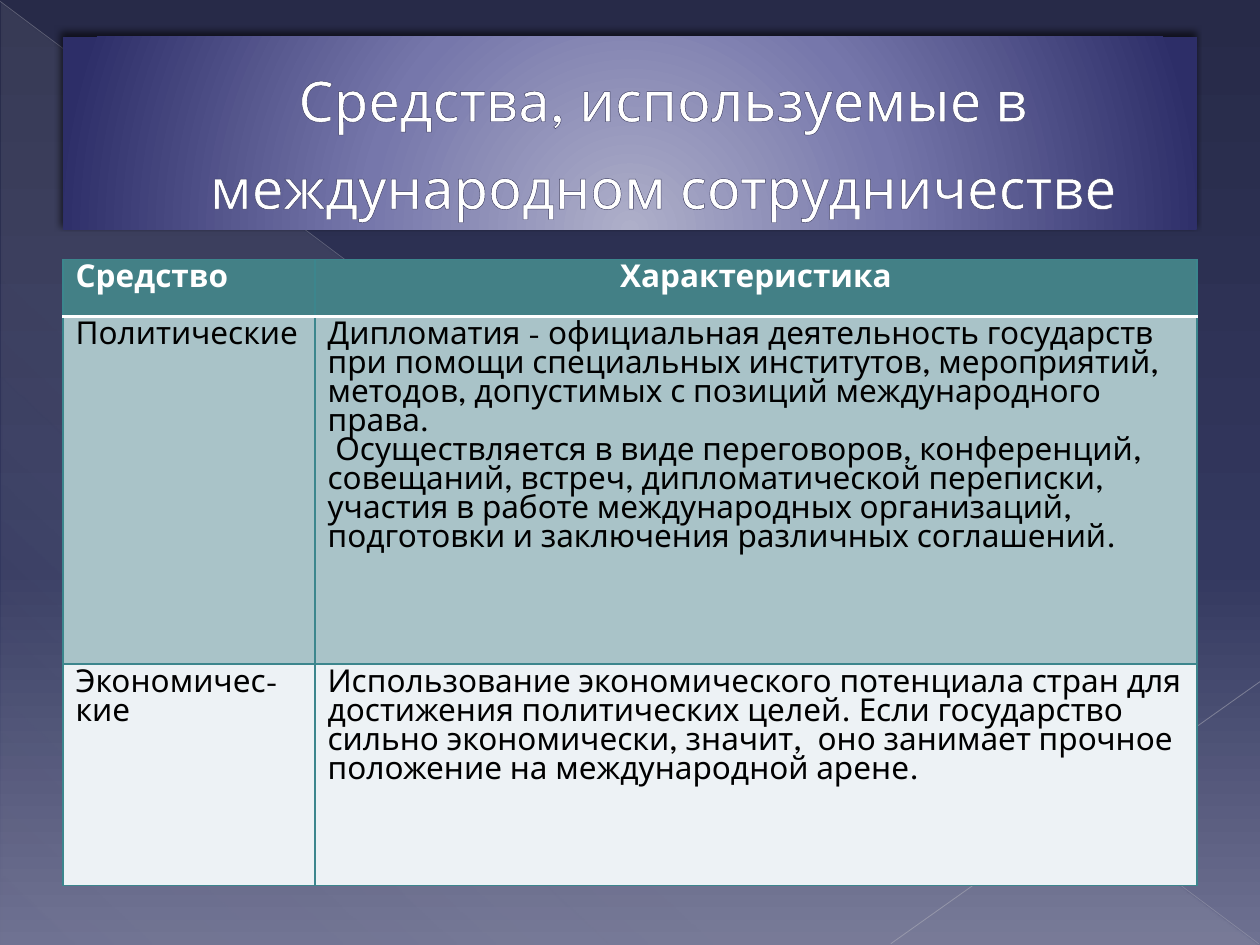
from lxml import etree
from pptx import Presentation
from pptx.dml.color import RGBColor
from pptx.enum.shapes import MSO_CONNECTOR, MSO_SHAPE
from pptx.enum.text import MSO_ANCHOR, MSO_AUTO_SIZE, PP_ALIGN
from pptx.oxml.ns import qn
from pptx.util import Inches, Pt

STRAIGHT = MSO_CONNECTOR.STRAIGHT
TRIANGLE = MSO_SHAPE.RIGHT_TRIANGLE
LEFT, CENTER = PP_ALIGN.LEFT, PP_ALIGN.CENTER
MIDDLE = MSO_ANCHOR.MIDDLE
NO_AUTOFIT = MSO_AUTO_SIZE.NONE

FONT = "League Spartan"
WHITE = RGBColor(0xFF, 0xFF, 0xFF)
BLACK = RGBColor(0x00, 0x00, 0x00)
NIGHT = RGBColor(0x27, 0x2A, 0x48)
INDIGO = RGBColor(0x33, 0x38, 0x5F)
HAZE = RGBColor(0x6E, 0x71, 0x91)
MIST = RGBColor(0xDE, 0xDE, 0xDE)
RAY = RGBColor(0xBB, 0xBB, 0xC2)
GLOW = RGBColor(0xAE, 0xAF, 0xC9)
VIOLET = RGBColor(0x76, 0x77, 0xAB)
DEEP = RGBColor(0x2D, 0x2E, 0x68)
OUTLINE = RGBColor(0x3A, 0x3A, 0x60)
TEAL = RGBColor(0x43, 0x80, 0x86)
TEAL_BORDER = RGBColor(0x3C, 0x86, 0x8D)
TEAL_BAND = RGBColor(0xA9, 0xC3, 0xC8)
PALE_BAND = RGBColor(0xED, 0xF2, 0xF5)

COLUMNS = [2, 7]
ROWS = [0.45, 2.76, 1.76]
HEADER = ["Средство", "Характеристика"]
POLITICAL = [
    "Политические",
    "Дипломатия - официальная деятельность государств при помощи специальных "
    "институтов, мероприятий, методов, допустимых с позиций международного права.\n"
    " Осуществляется в виде переговоров, конференций, совещаний, встреч, "
    "дипломатической переписки, участия в работе международных организаций, "
    "подготовки и заключения различных соглашений.",
]
ECONOMIC = [
    "Экономичес-кие",
    "Использование экономического потенциала стран для достижения политических "
    "целей. Если государство сильно экономически, значит,  оно занимает прочное "
    "положение на международной арене.",
]


def add_color(parent, color, alpha=100):
    node = etree.SubElement(parent, qn("a:srgbClr"), val=str(color))
    if alpha < 100:
        etree.SubElement(node, qn("a:alpha"), val=str(alpha * 1000))


def set_gradient(fill, owner, stops, angle=None, focus=None):
    """Stops are (position, colour, alpha); focus is a circle's l, t, r, b."""
    fill.gradient()
    gradient = next(owner.iter(qn("a:gradFill")))
    for child in list(gradient):
        gradient.remove(child)
    stop_list = etree.SubElement(gradient, qn("a:gsLst"))
    for position, color, alpha in stops:
        stop = etree.SubElement(stop_list, qn("a:gs"), pos=str(position * 1000))
        add_color(stop, color, alpha)
    if focus:
        circle = etree.SubElement(gradient, qn("a:path"), path="circle")
        sides = {side: str(value * 1000) for side, value in zip("ltrb", focus)}
        etree.SubElement(circle, qn("a:fillToRect"), **sides)
    else:
        etree.SubElement(gradient, qn("a:lin"), ang=str(angle * 60000), scaled="0")


def write_text(frame, text, size=18, color=BLACK, bold=False, align=LEFT):
    frame.word_wrap = True
    frame.text = text
    for para in frame.paragraphs:
        para.alignment = align
        for span in para.runs:
            font = span.font
            font.name, font.size, font.bold = FONT, Pt(size), bold
            font.color.rgb = color


def add_ray(page, start, end, width, alpha):
    ray = page.shapes.add_connector(STRAIGHT, *map(Inches, start + end))
    ray.line.width = Pt(width)
    ray.line.color.rgb = RAY
    color = next(ray._element.spPr.iter(qn("a:srgbClr")))
    etree.SubElement(color, qn("a:alpha"), val=str(alpha * 1000))
    etree.SubElement(ray._element.spPr, qn("a:effectLst"))


def add_backdrop(page):
    set_gradient(page.background.fill, page._element,
                 [(0, NIGHT, 100), (60, INDIGO, 100), (100, HAZE, 100)], angle=90)
    veil = page.shapes.add_shape(TRIANGLE, Inches(0.01), Inches(0.02),
                                 Inches(9.98), Inches(7.48))
    veil.shadow.inherit = False
    veil.line.fill.background()
    set_gradient(veil.fill, veil._element,
                 [(0, MIST, 10), (70, MIST, 8), (100, MIST, 1)], angle=133)
    add_ray(page, (0, 0.01), (9.99, 7.49), 0.39, 35)
    add_ray(page, (10, 5.41), (7.07, 7.49), 0.47, 45)


def add_title(page, text):
    title = page.shapes.title
    page.shapes._spTree.append(title._element)  # in front of the backdrop
    title.left, title.top = Inches(0.5), Inches(0.29)
    title.width, title.height = Inches(9), Inches(1.53)
    set_gradient(title.fill, title._element,
                 [(0, GLOW, 100), (46, VIOLET, 100), (100, DEEP, 100)],
                 focus=(50, 155, 50, -55))
    effects = etree.SubElement(title._element.spPr, qn("a:effectLst"))
    shadow = etree.SubElement(effects, qn("a:outerShdw"), blurRad=str(Pt(4)),
                              dist=str(Pt(3)), dir=str(245 * 60000))
    add_color(shadow, BLACK, 60)

    frame = title.text_frame
    frame.auto_size = NO_AUTOFIT
    frame.vertical_anchor = MIDDLE
    write_text(frame, text, size=32, color=WHITE, align=CENTER)
    para = frame.paragraphs[0]
    para.line_spacing = 1.3
    para._p.get_or_add_pPr().set("marL", str(Inches(0.53)))
    outline = etree.Element(qn("a:ln"), w=str(Pt(0.5)))
    add_color(etree.SubElement(outline, qn("a:solidFill")), OUTLINE)
    para.runs[0].font._element.insert(0, outline)


def set_borders(cell, **sides):
    """Each side (L, R, T, B) is a colour and a width in points."""
    properties = cell._tc.get_or_add_tcPr()
    for index, (side, (color, width)) in enumerate(sides.items()):
        border = etree.Element(qn(f"a:ln{side}"), w=str(Pt(width)))
        add_color(etree.SubElement(border, qn("a:solidFill")), color)
        properties.insert(index, border)


def add_means_table(page):
    table = page.shapes.add_table(len(ROWS), len(COLUMNS), Inches(0.5), Inches(2.06),
                                  Inches(sum(COLUMNS)), Inches(sum(ROWS))).table
    for column, width in zip(table.columns, COLUMNS):
        column.width = Inches(width)
    for row, height in zip(table.rows, ROWS):
        row.height = Inches(height)

    thin, heavy = (TEAL_BORDER, 0.75), (WHITE, 2)
    fills = [TEAL, TEAL_BAND, PALE_BAND]
    for i, texts in enumerate([HEADER, POLITICAL, ECONOMIC]):
        is_header = i == 0
        for j, text in enumerate(texts):
            cell = table.cell(i, j)
            cell.fill.solid()
            cell.fill.fore_color.rgb = fills[i]
            write_text(cell.text_frame, text, bold=is_header,
                       color=WHITE if is_header else BLACK,
                       align=CENTER if is_header and j == 1 else LEFT)
            set_borders(cell, L=thin, R=thin, T=heavy if i == 1 else thin,
                        B=heavy if is_header else thin)


def main():
    deck = Presentation()
    deck.slide_width, deck.slide_height = Inches(10), Inches(7.5)
    page = deck.slides.add_slide(deck.slide_layouts[5])
    add_backdrop(page)
    add_title(page, "Средства, используемые в международном сотрудничестве")
    add_means_table(page)
    deck.save("out.pptx")


if __name__ == "__main__":
    main()
